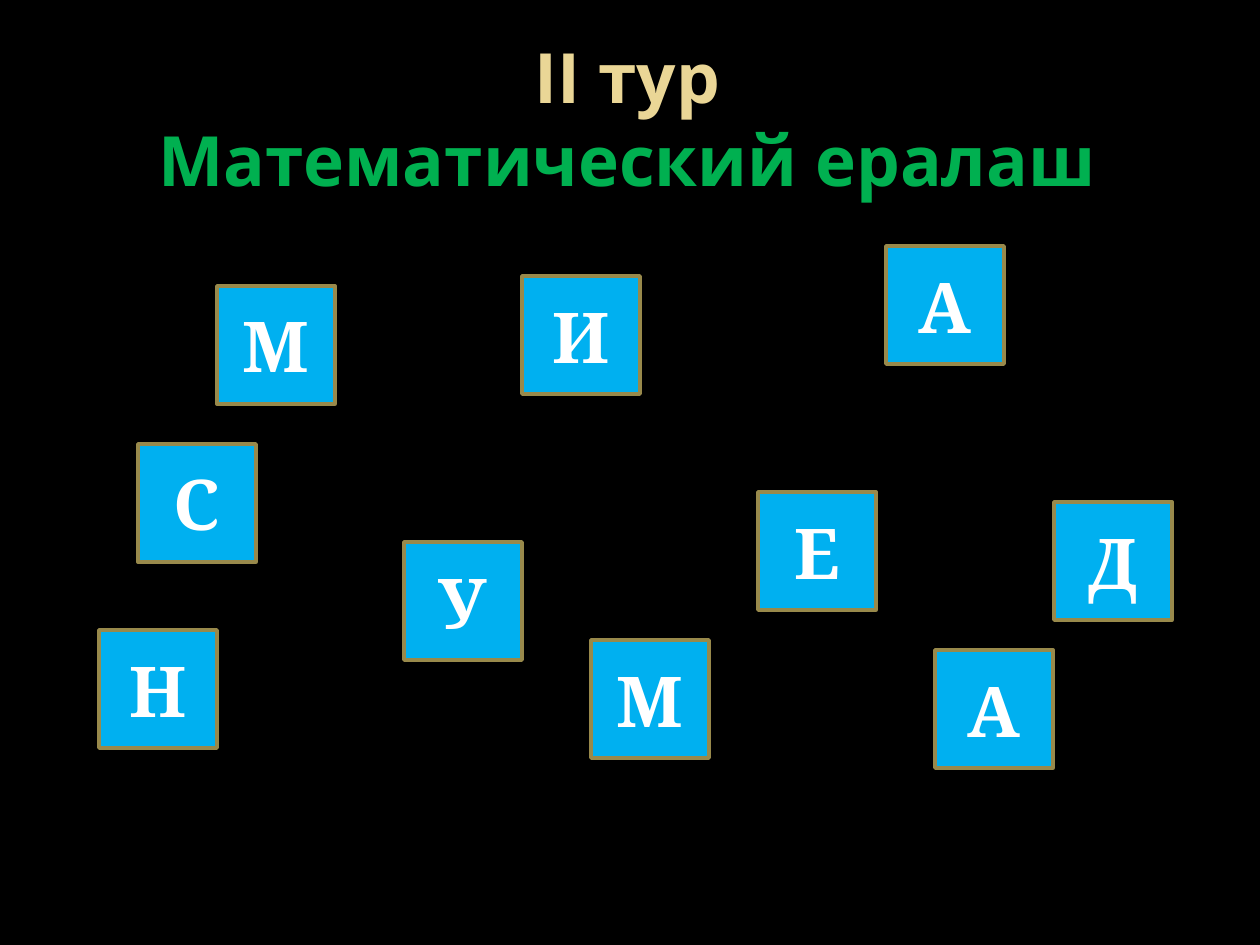
from pptx import Presentation
from pptx import util as u
from pptx.dml.color import RGBColor
from pptx.enum import shapes, text

PX = u.Inches(10) / 1260
HUES = {"back": "000000", "tile": "00B0F0", "edge": "98894B",
        "sand": "EAD696", "green": "00B050", "white": "FFFFFF"}


def hue(name):
    return RGBColor.from_string(HUES[name])


def write(para, words, face, size, name):
    run = para.add_run()
    run.text = words
    run.font.name = face
    run.font.size = u.Pt(size)
    run.font.bold = True
    run.font.color.rgb = hue(name)


deck = Presentation()
deck.slide_width = round(1260 * PX)
deck.slide_height = round(945 * PX)
slide = deck.slides.add_slide(deck.slide_layouts[6])
slide.background.fill.solid()
slide.background.fill.fore_color.rgb = hue("back")

title = slide.shapes.add_textbox(*[round(n * PX) for n in (29, 59, 1197, 116)])
frame = title.text_frame
frame.word_wrap = True
frame.vertical_anchor = text.MSO_ANCHOR.MIDDLE
para = frame.paragraphs[0]
para.alignment = text.PP_ALIGN.CENTER
write(para, "II тур", "Open Sans", 39.6, "sand")
para.add_line_break()
write(para, "Математический ералаш", "Open Sans", 39.6, "green")

SIDE = 118
TILES = [
    ("М", 217, 286), ("С", 138, 444), ("У", 404, 542), ("М", 591, 640),
    ("А", 935, 650), ("А", 886, 246), ("Е", 758, 492), ("Д", 1054, 502),
    ("Н", 99, 630), ("И", 522, 276),
]
for sign, left, top in TILES:
    box = [round(n * PX) for n in (left, top, SIDE, SIDE)]
    tile = slide.shapes.add_shape(shapes.MSO_SHAPE.RECTANGLE, *box)
    tile.shadow.inherit = False
    tile.fill.solid()
    tile.fill.fore_color.rgb = hue("tile")
    tile.line.color.rgb = hue("edge")
    tile.line.width = u.Pt(2)
    frame = tile.text_frame
    frame.vertical_anchor = text.MSO_ANCHOR.MIDDLE
    para = frame.paragraphs[0]
    para.alignment = text.PP_ALIGN.CENTER
    write(para, sign, "Cambria", 40, "white")

deck.save("out.pptx")
